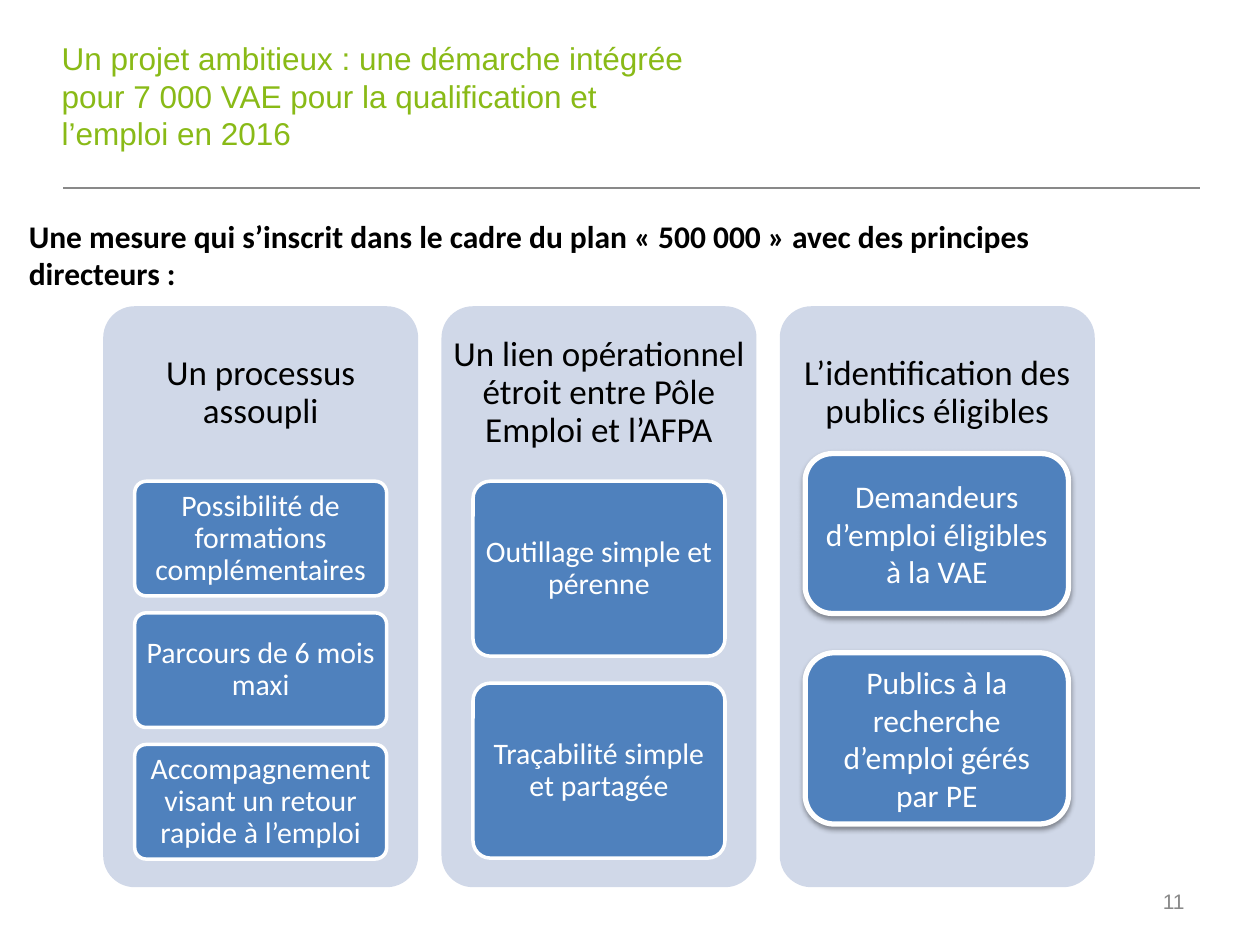
from lxml import etree
from pptx import Presentation
from pptx.dml.color import RGBColor
from pptx.enum.shapes import MSO_CONNECTOR, MSO_SHAPE
from pptx.enum.text import MSO_ANCHOR, MSO_AUTO_SIZE, PP_ALIGN
from pptx.oxml import parse_xml
from pptx.oxml.ns import nsdecls, qn
from pptx.util import Pt

LEFT, MID, RIGHT = PP_ALIGN.LEFT, PP_ALIGN.CENTER, PP_ALIGN.RIGHT
TOP, CENTER, BOTTOM = MSO_ANCHOR.TOP, MSO_ANCHOR.MIDDLE, MSO_ANCHOR.BOTTOM
ROUND = MSO_SHAPE.ROUNDED_RECTANGLE
HEX = {"green": "89BA17", "gray": "898989", "pale": "D0D8E8",
       "blue": "4F81BD", "white": "FFFFFF", "black": "000000"}
RGB = {name: RGBColor.from_string(code) for name, code in HEX.items()}


def write(shape, text, size, color, align=MID, anchor=CENTER, face="Calibri",
          bold=False, space=None, pad=(7.2, 3.6)):
    frame = shape.text_frame
    frame.text = text
    form = {"word_wrap": True, "auto_size": MSO_AUTO_SIZE.NONE,
            "vertical_anchor": anchor,
            "margin_left": Pt(pad[0]), "margin_right": Pt(pad[0]),
            "margin_top": Pt(pad[1]), "margin_bottom": Pt(pad[1])}
    for key, value in form.items():
        setattr(frame, key, value)
    para = frame.paragraphs[0]
    para.alignment = align
    if space:
        para.line_spacing = space
    for key, value in {"name": face, "size": Pt(size), "bold": bold}.items():
        setattr(para.font, key, value)
    para.font.color.rgb = RGB[color]


def panel(x, y, w, h, fill, edge=0, round_by=0.1):
    shape = slide.shapes.add_shape(ROUND, Pt(x), Pt(y), Pt(w), Pt(h))
    shape.adjustments[0] = round_by
    shape.shadow.inherit = False
    shape.fill.solid()
    shape.fill.fore_color.rgb = RGB[fill]
    if edge:
        shape.line.color.rgb = RGB["white"]
        shape.line.width = Pt(edge)
    else:
        shape.line.fill.background()
    return shape


deck = Presentation()
deck.slide_width, deck.slide_height = Pt(720), Pt(540)
slide = deck.slides.add_slide(deck.slide_layouts[5])

rule = slide.shapes.add_connector(
    MSO_CONNECTOR.STRAIGHT, Pt(36), Pt(107.3), Pt(686), Pt(107.3))
rule.line.color.rgb = RGB["gray"]
rule.line.width = Pt(1)
etree.SubElement(rule._element.spPr, qn("a:effectLst"))

title = slide.shapes.title
spot = {"left": 28, "top": 15, "width": 379.5, "height": 75.6}
for key, value in spot.items():
    setattr(title, key, Pt(value))
write(title, "Un projet ambitieux : une démarche intégrée pour 7 000 VAE "
      "pour la qualification et l’emploi en 2016",
      18, "green", LEFT, BOTTOM, "Arial")

columns = [
    ("Un processus assoupli", 65.5, 75.2,
     ["Possibilité de formations complémentaires",
      "Parcours de 6 mois maxi",
      "Accompagnement visant un retour rapide à l’emploi"]),
    ("Un lien opérationnel étroit entre Pôle Emploi et l’AFPA", 100, 115.4,
     ["Outillage simple et pérenne", "Traçabilité simple et partagée"]),
    ("L’identification des publics éligibles", 0, 0, []),
]
for col, (head, high, step, cards) in enumerate(columns):
    x = 59 + 193.3 * col
    panel(x, 175, 180, 332, "pale")
    box = slide.shapes.add_textbox(Pt(x), Pt(175), Pt(180), Pt(99.5))
    write(box, head, 20, "black", space=0.9, pad=(6, 6))
    for row, text in enumerate(cards):
        card = panel(x + 18, 275 + step * row, 144, high, "blue", 2)
        write(card, text, 17, "white", space=0.9, pad=(3.6, 2.9))

groups = [(259.2, 91.4, "Demandeurs d’emploi éligibles à la VAE"),
          (373, 97.9, "Publics à la recherche d’emploi gérés par PE")]
for y, high, text in groups:
    card = panel(460.1, y, 150.5, high, "blue", 3, 0.17)
    write(card, text, 18, "white")
    card._element.spPr.find(qn("a:effectLst")).append(parse_xml(
        f'<a:outerShdw {nsdecls("a")} blurRad="39400" dist="20300" '
        f'dir="5400000" rotWithShape="0"><a:srgbClr val="{HEX["black"]}">'
        '<a:alpha val="38000"/></a:srgbClr></a:outerShdw>'))

lead = slide.shapes.add_textbox(Pt(9.4), Pt(120.2), Pt(674.6), Pt(29))
write(lead, "Une mesure qui s’inscrit dans le cadre du plan « 500 000 » "
      "avec des principes directeurs :", 18, "black", LEFT, TOP, bold=True)

page = slide.shapes.add_textbox(Pt(516), Pt(500.5), Pt(168), Pt(28.8))
write(page, "11", 12, "gray", RIGHT, face="Arial")

deck.save("out.pptx")
